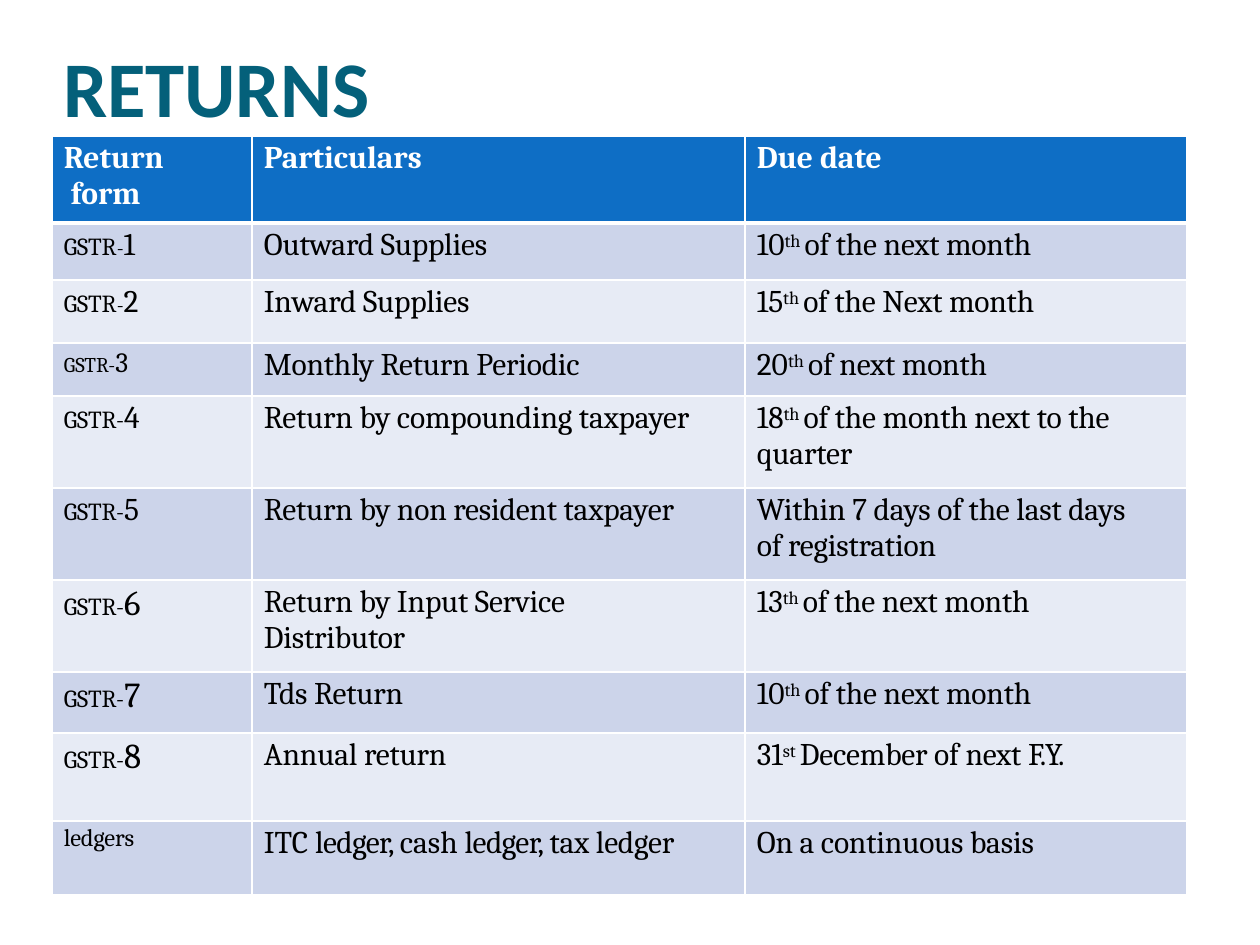
"""Build the slide that lists the tax return forms and their due dates."""
from dataclasses import dataclass

from lxml.etree import SubElement
from pptx import Presentation
from pptx.dml.color import RGBColor
from pptx.oxml.ns import qn
from pptx.util import Emu, Pt

EMU_PER_PX = 914400 / 126


@dataclass(frozen=True)
class Theme:
    title_font: str = "Calibri"
    table_font: str = "Cambria"
    title_color: str = "04607A"
    header_fill: str = "0E6EC5"
    band_fills: tuple[str, str] = ("CCD4EA", "E7EBF5")
    white: str = "FFFFFF"
    black: str = "000000"
    title_size: int = 45
    body_size: int = 18
    label_size: int = 14
    small_size: int = 12
    thin_border: int = 1
    thick_border: int = 3


THEME = Theme()


@dataclass(frozen=True)
class Run:
    text: str
    size: int = THEME.body_size
    tracking: int = 0
    baseline: int = 0


@dataclass(frozen=True)
class ReturnRow:
    height: int
    form: tuple[Run, ...]
    particulars: tuple[Run, ...]
    due: tuple[Run, ...]


def px(length: int) -> Emu:
    """Turn pixels into EMU."""
    return Emu(round(length * EMU_PER_PX))


def phrase(text: str) -> tuple[Run, ...]:
    """Return one slightly tightened body run."""
    return (Run(text, tracking=-10),)


def gstr(number: int, size: int = THEME.body_size, label: int = THEME.label_size) -> tuple[Run, ...]:
    """Return a form label with a small prefix and a larger number."""
    return Run("GSTR-", label), Run(str(number), size)


def day(number: int, rest: str, suffix: str = "th") -> tuple[Run, ...]:
    """Return a date that begins with a raised ordinal suffix."""
    return Run(str(number)), Run(f"{suffix} ", baseline=25000), *phrase(rest)


HEADER = ReturnRow(87, (Run("Return\v form"),), (Run("Particulars"),), (Run("Due date"),))
ROWS = (
    ReturnRow(57, (Run("GSTR", THEME.label_size), Run("-", THEME.small_size), Run("1")),
              phrase("Outward Supplies"), day(10, "of the next month")),
    ReturnRow(63, (Run("GSTR", THEME.label_size), Run("-", THEME.small_size), Run("2")),
              phrase("Inward Supplies"), day(15, "of the Next month")),
    ReturnRow(53, gstr(3, 16, THEME.small_size), phrase("Monthly Return Periodic"),
              day(20, "of next month")),
    ReturnRow(92, gstr(4), phrase("Return by compounding taxpayer"),
              day(18, "of the month next to the quarter")),
    ReturnRow(92, gstr(5), phrase("Return by non resident taxpayer"),
              phrase("Within 7 days of the last days of registration")),
    ReturnRow(92, gstr(6, 20), phrase("Return by Input Service Distributor"),
              day(13, "of the next month")),
    ReturnRow(61, gstr(7, 20), phrase("Tds Return"), day(10, "of the next month")),
    ReturnRow(88, gstr(8, 20), phrase("Annual return"),
              (*day(31, "December of next ", "st"), Run("F.Y.", tracking=-70))),
    ReturnRow(74, (Run("ledgers", THEME.label_size, -10),),
              (Run("ITC "), Run("ledger, ", tracking=-30), Run("cash "),
               Run("ledger, ", tracking=-30), Run("tax ledger", tracking=-10)),
              phrase("On a continuous basis")),
)
COLUMN_WIDTHS = (200, 493, 442)


def add_runs(paragraph, runs: tuple[Run, ...], font: str, color: str, bold: bool) -> None:
    """Write styled runs, turning vertical tabs into line breaks."""
    for item in runs:
        for index, text in enumerate(item.text.split("\v")):
            if index:
                paragraph.add_line_break()
            run = paragraph.add_run()
            run.text = text
            run.font.name = font
            run.font.size = Pt(item.size)
            run.font.bold = bold
            run.font.color.rgb = RGBColor.from_string(color)
            properties = run._r.get_or_add_rPr()
            if item.tracking:
                properties.set("spc", str(item.tracking))
            if item.baseline:
                properties.set("baseline", str(item.baseline))


def add_borders(cell, top: int, bottom: int) -> None:
    """Draw white borders with the given top and bottom widths in points."""
    properties = cell._tc.get_or_add_tcPr()
    widths = {"L": THEME.thin_border, "R": THEME.thin_border, "T": top, "B": bottom}
    for side, width in widths.items():
        line = SubElement(properties, qn(f"a:ln{side}"), w=str(Pt(width)))
        SubElement(SubElement(line, qn("a:solidFill")), qn("a:srgbClr"), val=THEME.white)


def add_title(slide) -> None:
    """Add the slide title."""
    shape = slide.shapes.add_textbox(px(62), px(35), px(310), px(98))
    frame = shape.text_frame
    frame.margin_left, frame.margin_top = px(1), px(4)
    frame.margin_right = frame.margin_bottom = 0
    frame.word_wrap = True
    add_runs(frame.paragraphs[0], (Run("RETURNS", THEME.title_size),),
             THEME.title_font, THEME.title_color, True)


def fill_cell(cell, runs: tuple[Run, ...], row_index: int) -> None:
    """Style one table cell and write its text."""
    is_header = row_index == 0
    cell.margin_left, cell.margin_top = px(12), px(4)
    cell.margin_right, cell.margin_bottom = px(45), 0
    add_borders(cell,
                THEME.thick_border if row_index == 1 else THEME.thin_border,
                THEME.thick_border if is_header else THEME.thin_border)
    fill = THEME.header_fill if is_header else THEME.band_fills[(row_index - 1) % 2]
    cell.fill.solid()
    cell.fill.fore_color.rgb = RGBColor.from_string(fill)
    add_runs(cell.text_frame.paragraphs[0], runs, THEME.table_font,
             THEME.white if is_header else THEME.black, is_header)


def add_returns_table(slide) -> None:
    """Add the table of return forms."""
    rows = (HEADER, *ROWS)
    height = sum(row.height for row in rows)
    table = slide.shapes.add_table(len(rows), len(COLUMN_WIDTHS), px(52), px(136),
                                   px(sum(COLUMN_WIDTHS)), px(height)).table
    table.first_row = table.horz_banding = False
    for column, width in zip(table.columns, COLUMN_WIDTHS):
        column.width = px(width)
    for row_index, row in enumerate(rows):
        table.rows[row_index].height = px(row.height)
        for column_index, runs in enumerate((row.form, row.particulars, row.due)):
            fill_cell(table.cell(row_index, column_index), runs, row_index)


def main() -> None:
    """Create and save the presentation."""
    presentation = Presentation()
    presentation.slide_width, presentation.slide_height = px(1260), px(945)
    slide = presentation.slides.add_slide(presentation.slide_layouts[6])
    add_title(slide)
    add_returns_table(slide)
    presentation.save("out.pptx")


if __name__ == "__main__":
    main()
